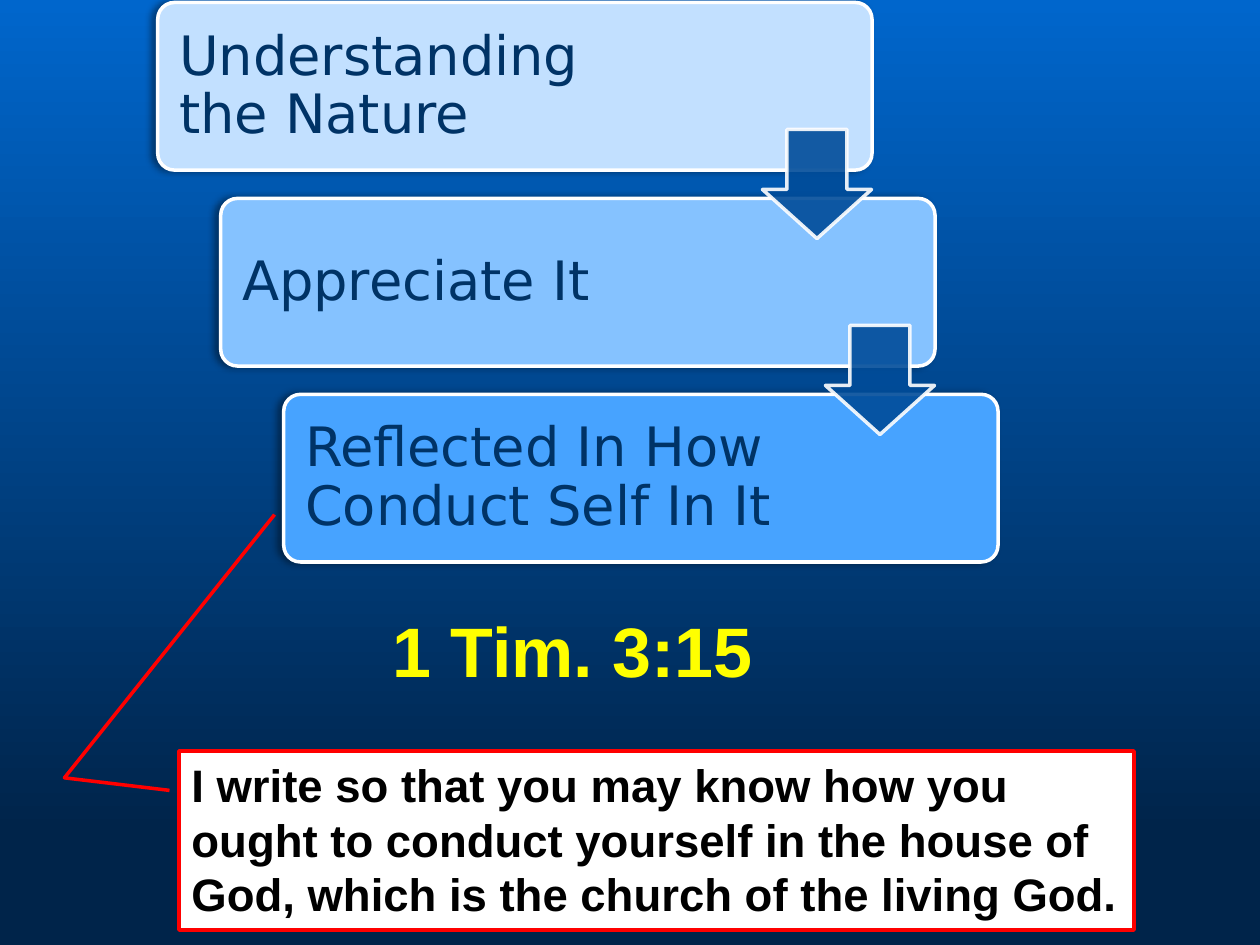
from lxml.etree import SubElement
from pptx import Presentation
from pptx.dml.color import RGBColor
from pptx.enum.shapes import MSO_SHAPE as Preset
from pptx.enum.text import MSO_ANCHOR as Anchor, MSO_AUTO_SIZE as AutoSize, PP_ALIGN as Align
from pptx.oxml.ns import qn
from pptx.util import Cm, Pt

SKY = RGBColor(0x00, 0x66, 0xCC)
MIDNIGHT = RGBColor(0x00, 0x24, 0x4A)
NAVY = RGBColor(0x00, 0x33, 0x66)
ARROW_BLUE = RGBColor(0x00, 0x4C, 0x99)
WHITE = RGBColor(0xFF, 0xFF, 0xFF)
BLACK = RGBColor(0x00, 0x00, 0x00)
RED = RGBColor(0xFF, 0x00, 0x00)
YELLOW = RGBColor(0xFF, 0xFF, 0x00)

STEPS = [
    ("Understanding the Nature", RGBColor(0xC2, 0xE0, 0xFF)),
    ("Appreciate It", RGBColor(0x85, 0xC2, 0xFF)),
    ("Reflected In How Conduct Self In It", RGBColor(0x47, 0xA3, 0xFF)),
]
STEP_RIGHT, STEP_DOWN = 1.27, 3.95
VERSE = (
    "I write so that you may know how you ought to conduct yourself "
    "in the house of God, which is the church of the living God."
)


def apply(target, values):
    for name, value in values.items():
        setattr(target, name, value)


class StairSlide:
    STEP_FONT = {"name": "DejaVu Sans", "size": Pt(31)}
    TITLE_FONT = {"name": "Arial", "size": Pt(40), "bold": True}
    VERSE_FONT = {"name": "Arial", "size": Pt(26), "bold": True}
    STEP_FRAME = {
        "word_wrap": True,
        "vertical_anchor": Anchor.MIDDLE,
        **{f"margin_{side}": Cm(0.33) for side in ("left", "top", "right", "bottom")},
    }

    def __init__(self, slide):
        self.slide = slide

    def background(self, top, bottom):
        fill = self.slide.background.fill
        fill.gradient()
        fill.gradient_angle = 270
        for stop, color, position in zip(fill.gradient_stops, (top, bottom), (0, 0.88)):
            stop.color.rgb = color
            stop.position = position

    def fill_frame(self, frame, words, font, color, frame_format, paragraph_format):
        apply(frame, frame_format)
        paragraph = frame.paragraphs[0]
        apply(paragraph, paragraph_format)
        run = paragraph.add_run()
        run.text = words
        apply(run.font, font)
        run.font.color.rgb = color

    def shape(self, preset, box, color, edge, adjustments):
        outline = self.slide.shapes.add_shape(preset, *map(Cm, box))
        outline.shadow.inherit = False
        outline.fill.solid()
        outline.fill.fore_color.rgb = color
        outline.line.color.rgb = edge
        outline.line.width = Pt(2)
        for index, value in enumerate(adjustments):
            outline.adjustments[index] = value
        return outline

    def text(self, box, words, font, color, frame_format, paragraph_format):
        frame = self.slide.shapes.add_textbox(*map(Cm, box)).text_frame
        self.fill_frame(frame, words, font, color, frame_format, paragraph_format)

    def step(self, left, top, words, color):
        card = self.shape(Preset.ROUNDED_RECTANGLE, (left, top, 14.4, 3.38), color, WHITE, [0.1])
        effects = card.element.spPr.find(qn("a:effectLst"))
        shadow = SubElement(effects, qn("a:outerShdw"), blurRad=str(Pt(4)), dist=str(Pt(3)),
                            dir="10800000", rotWithShape="0")
        tint = SubElement(shadow, qn("a:srgbClr"), val=str(BLACK))
        SubElement(tint, qn("a:alpha"), val="40000")
        self.text((left + 0.1, top + 0.1, 10.73, 3.2), words, self.STEP_FONT, NAVY,
                  self.STEP_FRAME, {"line_spacing": 0.9})

    def arrow(self, left, top):
        arrow = self.shape(Preset.DOWN_ARROW, (left, top, 2.2, 2.2), ARROW_BLUE, WHITE, [0.55, 0.45])
        for tint in arrow.element.spPr.iter(qn("a:srgbClr")):
            SubElement(tint, qn("a:alpha"), val="90000")

    def title(self, box, words):
        self.text(box, words, self.TITLE_FONT, YELLOW,
                  {"word_wrap": True, "auto_size": AutoSize.SHAPE_TO_FIT_TEXT},
                  {"alignment": Align.CENTER})

    def callout(self, box, words, adjustments):
        callout = self.shape(Preset.LINE_CALLOUT_2, box, WHITE, RED, adjustments)
        self.fill_frame(callout.text_frame, words, self.VERSE_FONT, BLACK,
                        {"word_wrap": True, "vertical_anchor": Anchor.TOP},
                        {"alignment": Align.LEFT})


def main():
    deck = Presentation()
    apply(deck, {"slide_width": Cm(25.4), "slide_height": Cm(19.05)})
    stairs = StairSlide(deck.slides.add_slide(deck.slide_layouts[6]))
    stairs.background(SKY, MIDNIGHT)
    for level, (words, color) in enumerate(STEPS):
        stairs.step(3.18 + level * STEP_RIGHT, 0.05 + level * STEP_DOWN, words, color)
    for level in range(len(STEPS) - 1):
        stairs.arrow(15.37 + level * STEP_RIGHT, 2.61 + level * STEP_DOWN)
    stairs.title((1.32, 12.12, 20.45, 1.96), "1 Tim. 3:15")
    stairs.callout((3.61, 15.14, 19.25, 3.61), VERSE, [0.22, -0.01, 0.15, -0.12, -1.32, 0.1])
    deck.save("out.pptx")


if __name__ == "__main__":
    main()
